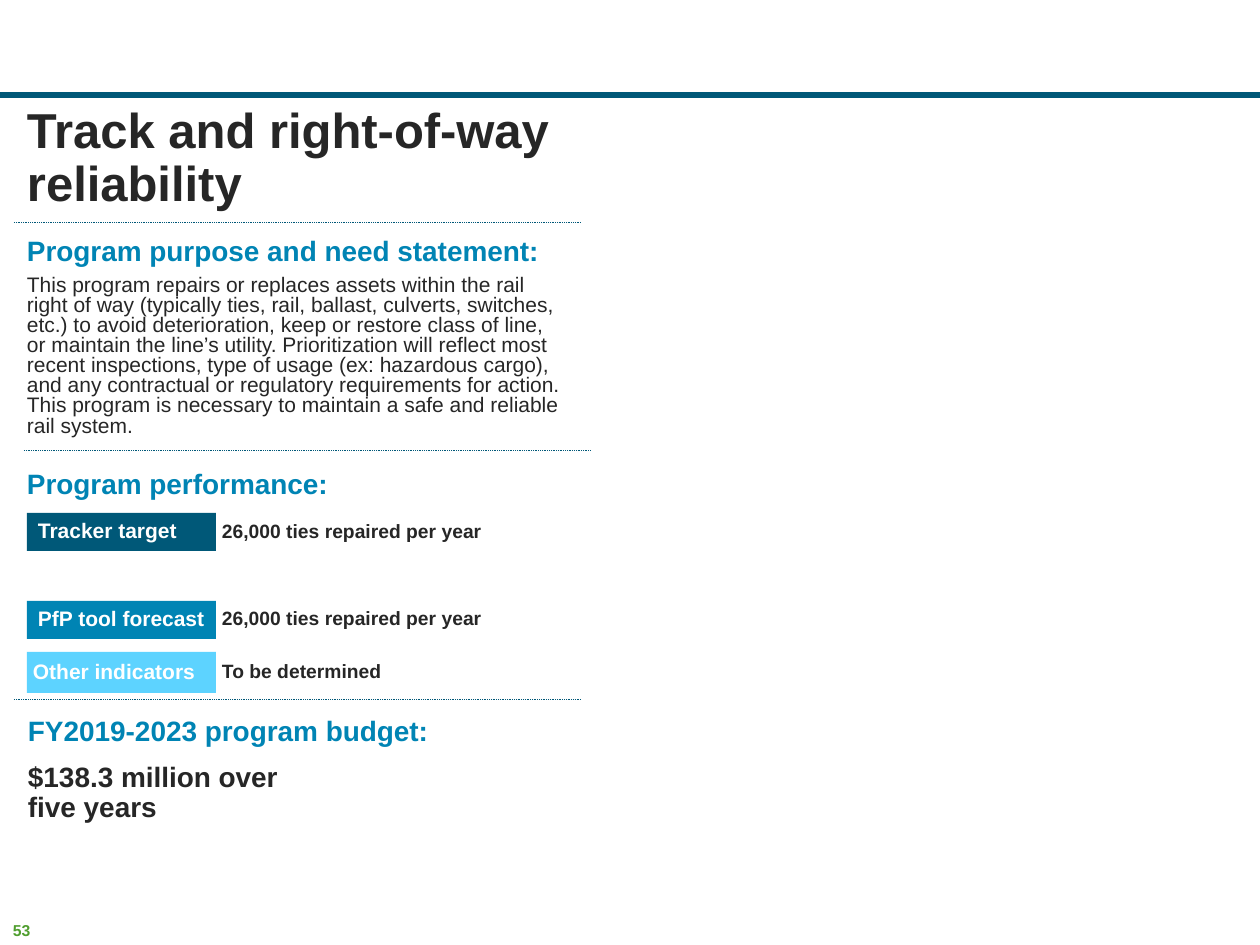
from dataclasses import dataclass

from lxml import etree
from pptx import Presentation
from pptx.dml.color import RGBColor
from pptx.enum.dml import MSO_LINE
from pptx.enum.shapes import MSO_CONNECTOR, MSO_SHAPE
from pptx.enum.text import MSO_ANCHOR, MSO_AUTO_SIZE, PP_ALIGN
from pptx.oxml.ns import qn
from pptx.util import Emu, Pt

RECT = MSO_SHAPE.RECTANGLE
STRAIGHT = MSO_CONNECTOR.STRAIGHT
DOTTED = MSO_LINE.ROUND_DOT
TOP, MIDDLE = MSO_ANCHOR.TOP, MSO_ANCHOR.MIDDLE
LEFT = PP_ALIGN.LEFT
NO_FIT = MSO_AUTO_SIZE.NONE


@dataclass(frozen=True)
class Theme:
    font: str = "Arial"
    navy: str = "005878"
    blue: str = "0084B4"
    sky: str = "5DD3FF"
    ink: str = "262626"
    green: str = "509E2F"
    white: str = "FFFFFF"
    title: int = 28
    heading: int = 16
    body: int = 12
    value: int = 11
    number: int = 9


T = Theme()
PX = 914400 / 126
INSETS = (13, 6, 13, 6)
FLUSH = (0, 6, 0, 6)
VALUE_INSETS = (9, 9, 11, 13)
COL_X, COL_W = 14, 567
EDGE_X = 28
CHIP_W, VALUE_X, VALUE_W = 189, 213, 378

TITLE = "Track and right-of-way reliability"
PURPOSE = (
    "This program repairs or replaces assets within the rail right of way "
    "(typically ties, rail, ballast, culverts, switches, etc.) to avoid "
    "deterioration, keep or restore class of line, or maintain the line’s "
    "utility. Prioritization will reflect most recent inspections, type of "
    "usage (ex: hazardous cargo), and any contractual or regulatory "
    "requirements for action. This program is necessary to maintain a safe "
    "and reliable rail system."
)
BUDGET = "$138.3 million over\vfive years"
PAGE = "53"

HEADINGS = [
    ("Program purpose and need statement:", COL_X, 231, 32, INSETS),
    ("Program performance:", COL_X, 464, 32, INSETS),
    ("FY2019-2023 program budget:", EDGE_X, 711, 48, FLUSH),
]
RULES = [(COL_X, 222), (24, 450), (COL_X, 699)]
INDICATORS = [
    ("Tracker target", T.navy, 513, 38, 11,
     "26,000 ties repaired per year", 513, 76, 0.9),
    ("PfP tool forecast", T.blue, 601, 38, 11,
     "26,000 ties repaired per year", 597, 43, 1.0),
    ("Other indicators", T.sky, 652, 41, 6,
     "To be determined", 653, 43, 0.9),
]


def px(*values):
    return [Emu(round(v * PX)) for v in values]


def rgb(color):
    return RGBColor.from_string(color)


def write(sp, text, size, color, bold=True, spacing=0.9, insets=INSETS,
          anchor=TOP, wrap=True):
    tf = sp.text_frame
    tf.text = text
    tf.word_wrap = wrap
    tf.auto_size = NO_FIT
    tf.vertical_anchor = anchor
    (tf.margin_left, tf.margin_top,
     tf.margin_right, tf.margin_bottom) = px(*insets)
    p = tf.paragraphs[0]
    p.alignment = LEFT
    p.line_spacing = spacing
    p.space_before = Pt(0)
    for r in p.runs:
        r.font.name = T.font
        r.font.size = Pt(size)
        r.font.bold = bold
        r.font.color.rgb = rgb(color)


def add_text(slide, box, *args, **style):
    write(slide.shapes.add_textbox(*px(*box)), *args, **style)


def add_block(slide, box, color):
    sp = slide.shapes.add_shape(RECT, *px(*box))
    sp.shadow.inherit = False
    sp.fill.solid()
    sp.fill.fore_color.rgb = rgb(color)
    sp.line.fill.background()
    return sp


def add_rule(slide, x, y):
    line = slide.shapes.add_connector(STRAIGHT, *px(x, y, x + COL_W, y))
    line.line.color.rgb = rgb(T.navy)
    line.line.width = Pt(0.5)
    line.line.dash_style = DOTTED
    etree.SubElement(line._element.spPr, qn("a:effectLst"))


def main():
    prs = Presentation()
    prs.slide_width, prs.slide_height = px(1260, 945)
    slide = prs.slides.add_slide(prs.slide_layouts[5])

    add_block(slide, (0, 92, 1260, 6), T.navy)
    title = slide.shapes.title
    title.left, title.top, title.width, title.height = px(COL_X, 100, COL_W, 121)
    write(title, TITLE, T.title, T.ink)

    for text, x, y, h, insets in HEADINGS:
        add_text(slide, (x, y, COL_W, h), text, T.heading, T.blue, insets=insets)
    for x, y in RULES:
        add_rule(slide, x, y)

    add_text(slide, (COL_X, 270, COL_W, 180), PURPOSE, T.body, T.ink,
             bold=False, spacing=0.8)

    for label, color, y, h, pad, value, value_y, value_h, spacing in INDICATORS:
        chip = add_block(slide, (EDGE_X - 1, y, CHIP_W, h), color)
        write(chip, label, T.body, T.white, insets=(pad, 6, 6, 6),
              anchor=MIDDLE, wrap=False)
        add_text(slide, (VALUE_X, value_y, VALUE_W, value_h), value, T.value,
                 T.ink, spacing=spacing, insets=VALUE_INSETS)

    add_text(slide, (EDGE_X, 757, COL_W, 47), BUDGET, T.heading, T.ink,
             insets=FLUSH)
    add_text(slide, (0, 915, 45, 32), PAGE, T.number, T.green, spacing=1.0,
             wrap=False)
    prs.save("out.pptx")


if __name__ == "__main__":
    main()
